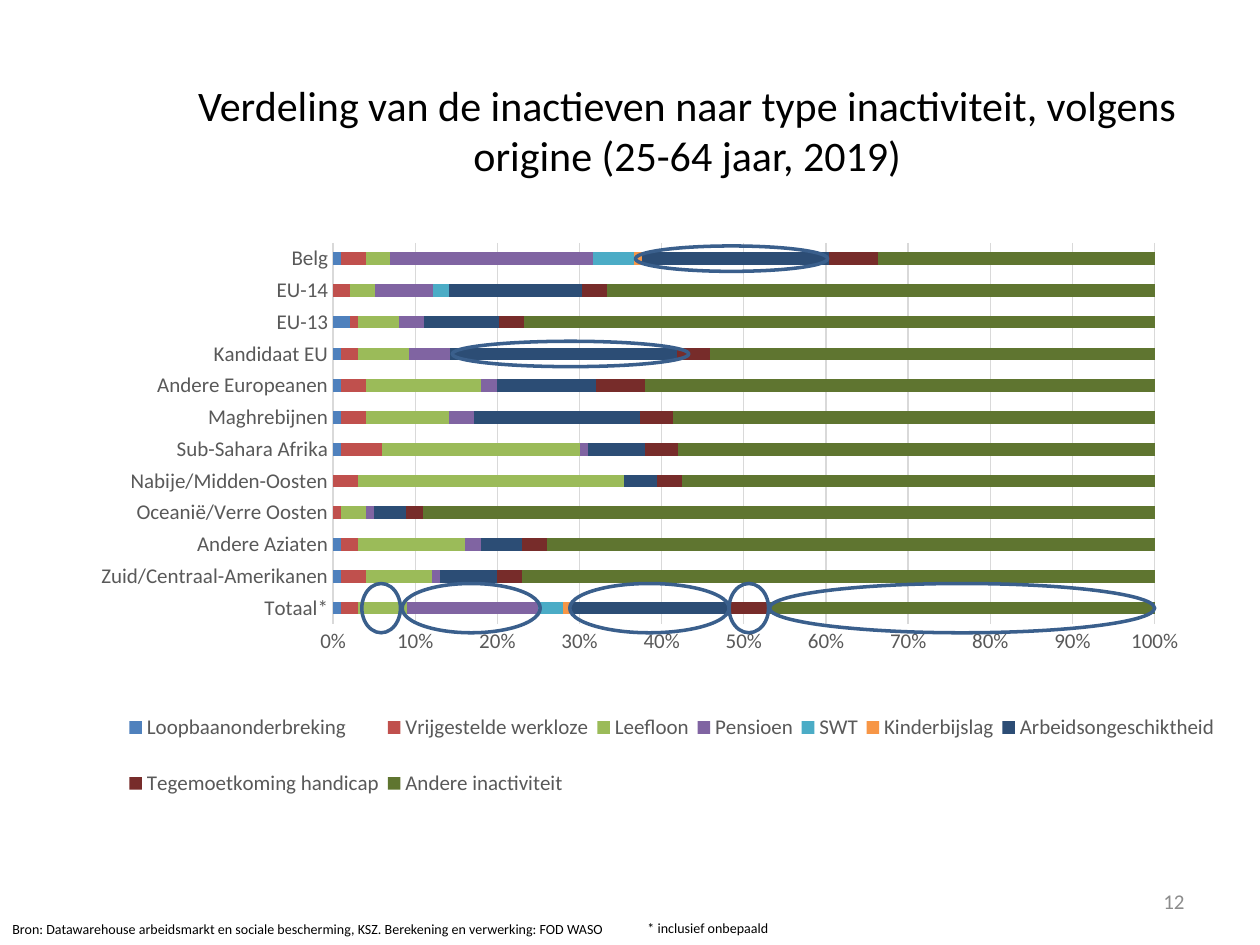
"""Build the slide on types of inactivity by origin, with the notable shares circled."""
from dataclasses import dataclass

from lxml import etree
from pptx import Presentation
from pptx import util as u
from pptx.chart import data as chart_data
from pptx.dml.color import RGBColor
from pptx.enum import chart as ch
from pptx.enum import shapes, text
from pptx.oxml import ns


@dataclass(frozen=True)
class Theme:
    font: str = "Calibri"
    ink: str = "000000"
    label: str = "595959"
    number: str = "8C8C8C"
    rule: str = "D9D9D9"
    ring: str = "3A5F8C"
    title_pt: int = 24
    chart_pt: int = 12
    note_pt: int = 8


@dataclass(frozen=True)
class Box:
    left: float
    top: float
    width: float
    height: float

    def share(self, x: float, y: float, width: float, height: float) -> "Box":
        return Box(self.left + x * self.width, self.top + y * self.height,
                   width * self.width, height * self.height)

    def emu(self) -> tuple:
        return tuple(u.Inches(v) for v in (self.left, self.top, self.width, self.height))


@dataclass(frozen=True)
class InactivityType:
    name: str
    color: str
    percents: tuple


@dataclass(frozen=True)
class Ring:
    """An ellipse around a row of the chart, from one percentage to another."""
    row: int
    start: float
    end: float
    rows_high: float


THEME = Theme()
CHART = Box(0.59, 1.74, 9.21, 4.92)
PLOT_SHARE = (0.223, 0.038, 0.708, 0.615)
LEGEND_SHARE = (0.04, 0.75, 0.95, 0.23)
ORIGINS = ("Totaal*", "Zuid/Centraal-Amerikanen", "Andere Aziaten", "Oceanië/Verre Oosten",
           "Nabije/Midden-Oosten", "Sub-Sahara Afrika", "Maghrebijnen", "Andere Europeanen",
           "Kandidaat EU", "EU-13", "EU-14", "Belg")
TYPES = (
    InactivityType("Loopbaanonderbreking", "4F81BD", (1, 1, 1, 0, 0, 1, 1, 1, 1, 2, 0, 1)),
    InactivityType("Vrijgestelde werkloze", "C0504D", (2, 3, 2, 1, 3, 5, 3, 3, 2, 1, 2, 3)),
    InactivityType("Leefloon", "9BBB59", (6, 8, 13, 3, 32, 24, 10, 14, 6, 5, 3, 3)),
    InactivityType("Pensioen", "8064A2", (16, 1, 2, 1, 0, 1, 3, 2, 5, 3, 7, 25)),
    InactivityType("SWT", "4BACC6", (3, 0, 0, 0, 0, 0, 0, 0, 0, 0, 2, 5)),
    InactivityType("Kinderbijslag", "F79646", (1, 0, 0, 0, 0, 0, 0, 0, 0, 0, 0, 1)),
    InactivityType("Arbeidsongeschiktheid", "2C4D75", (19, 7, 5, 4, 4, 7, 20, 12, 27, 9, 16, 23)),
    InactivityType("Tegemoetkoming handicap", "772C2A", (5, 3, 3, 2, 3, 4, 4, 6, 4, 3, 3, 6)),
    InactivityType("Andere inactiviteit", "5F7530",
                   (47, 77, 74, 90, 57, 58, 58, 62, 53, 76, 66, 34)),
)
TOTAL, CANDIDATE, BELGIAN = 11, 3, 0
RINGS = (
    Ring(TOTAL, 8.4, 25.2, 1.55), Ring(TOTAL, 28.8, 48.2, 1.55), Ring(TOTAL, 3.5, 8.2, 1.55),
    Ring(TOTAL, 48.2, 53, 1.55), Ring(TOTAL, 53.1, 100, 1.55),
    Ring(BELGIAN, 36.8, 60.2, 0.8), Ring(CANDIDATE, 14.5, 43.3, 0.8),
)


def style(font, size: int, color: str) -> None:
    font.name, font.size = THEME.font, u.Pt(size)
    font.color.rgb = RGBColor.from_string(color)


def draw_line(line, color: str, width: float) -> None:
    line.color.rgb = RGBColor.from_string(color)
    line.width = u.Pt(width)


def add_text(slide, box: Box, words: str, size: int, color: str, wrap: bool = True,
             align=text.PP_ALIGN.LEFT, anchor=text.MSO_ANCHOR.TOP) -> None:
    frame = slide.shapes.add_textbox(*box.emu()).text_frame
    frame.word_wrap, frame.vertical_anchor = wrap, anchor
    paragraph = frame.paragraphs[0]
    paragraph.text, paragraph.alignment = words, align
    style(paragraph.font, size, color)


def add_title(slide, box: Box, words: str) -> None:
    title = slide.shapes.title
    title.left, title.top, title.width, title.height = box.emu()
    frame = title.text_frame
    frame.vertical_anchor, frame.auto_size = text.MSO_ANCHOR.TOP, text.MSO_AUTO_SIZE.NONE
    paragraph = frame.paragraphs[0]
    paragraph.text, paragraph.alignment = words, text.PP_ALIGN.CENTER
    style(paragraph.font, THEME.title_pt, THEME.ink)


def place(part, index: int, share: tuple, inner: bool = False) -> None:
    """Give a chart part a fixed place, in shares of the chart."""
    for old in part.findall(ns.qn("c:layout")):
        part.remove(old)
    layout = etree.Element(ns.qn("c:layout"))
    manual = etree.SubElement(layout, ns.qn("c:manualLayout"))
    settings = [("layoutTarget", "inner")] if inner else []
    settings += [("xMode", "edge"), ("yMode", "edge"), *zip("xywh", share)]
    for tag, value in settings:
        etree.SubElement(manual, ns.qn(f"c:{tag}")).set("val", str(value))
    part.insert(index, layout)


def add_inactivity_chart(slide) -> None:
    figures = chart_data.CategoryChartData(number_format="0")
    figures.categories = ORIGINS
    for kind in TYPES:
        figures.add_series(kind.name, kind.percents)
    chart = slide.shapes.add_chart(ch.XL_CHART_TYPE.BAR_STACKED_100, *CHART.emu(), figures).chart
    style(chart.font, THEME.chart_pt, THEME.ink)
    chart.has_title = False
    bars = chart.plots[0]
    bars.gap_width, bars.overlap, bars.vary_by_categories = 150, 100, False
    for series, kind in zip(bars.series, TYPES):
        series.format.fill.solid()
        series.format.fill.fore_color.rgb = RGBColor.from_string(kind.color)

    origins, percents = chart.category_axis, chart.value_axis
    for axis in (origins, percents):
        axis.major_tick_mark = axis.minor_tick_mark = ch.XL_TICK_MARK.NONE
        style(axis.tick_labels.font, THEME.chart_pt, THEME.label)
    draw_line(origins.format.line, THEME.rule, 0.75)
    percents.format.line.fill.background()
    percents.has_major_gridlines = True
    draw_line(percents.major_gridlines.format.line, THEME.rule, 0.75)
    percents.minimum_scale, percents.maximum_scale, percents.major_unit = 0, 1, 0.1
    percents.tick_labels.number_format = "0%"
    percents.tick_labels.number_format_is_linked = False

    chart.has_legend = True
    legend = chart.legend
    legend.position, legend.include_in_layout = ch.XL_LEGEND_POSITION.BOTTOM, False
    style(legend.font, THEME.chart_pt, THEME.label)
    root = chart.element
    place(root.find(".//" + ns.qn("c:plotArea")), 0, PLOT_SHARE, inner=True)
    place(root.find(".//" + ns.qn("c:legend")), 1, LEGEND_SHARE)


def add_ring(slide, ring: Ring) -> None:
    rows = len(ORIGINS)
    box = CHART.share(*PLOT_SHARE).share(
        ring.start / 100, (ring.row + 0.5 - ring.rows_high / 2) / rows,
        (ring.end - ring.start) / 100, ring.rows_high / rows)
    ellipse = slide.shapes.add_shape(shapes.MSO_SHAPE.OVAL, *box.emu())
    ellipse.shadow.inherit = False
    ellipse.fill.background()
    draw_line(ellipse.line, THEME.ring, 2)


def main() -> None:
    deck = Presentation()
    deck.slide_width, deck.slide_height = u.Inches(10), u.Inches(7.5)
    slide = deck.slides.add_slide(deck.slide_layouts.get_by_name("Title Only"))
    add_text(slide, Box(7.17, 6.95, 2.33, 0.4), "12", THEME.chart_pt, THEME.number,
             align=text.PP_ALIGN.RIGHT, anchor=text.MSO_ANCHOR.MIDDLE)
    add_title(slide, Box(1.36, 0.58, 8.19, 0.91),
              "Verdeling van de inactieven naar type inactiviteit, volgens origine "
              "(25-64 jaar, 2019)")
    add_text(slide, Box(0, 7.26, 5.07, 0.24),
             "Bron: Datawarehouse arbeidsmarkt en sociale bescherming, KSZ. "
             "Berekening en verwerking: FOD WASO", THEME.note_pt, THEME.ink)
    add_inactivity_chart(slide)
    for ring in RINGS:
        add_ring(slide, ring)
    add_text(slide, Box(5.04, 7.25, 1.18, 0.24), "* inclusief onbepaald",
             THEME.note_pt, THEME.ink, wrap=False)
    deck.save("out.pptx")


if __name__ == "__main__":
    main()
